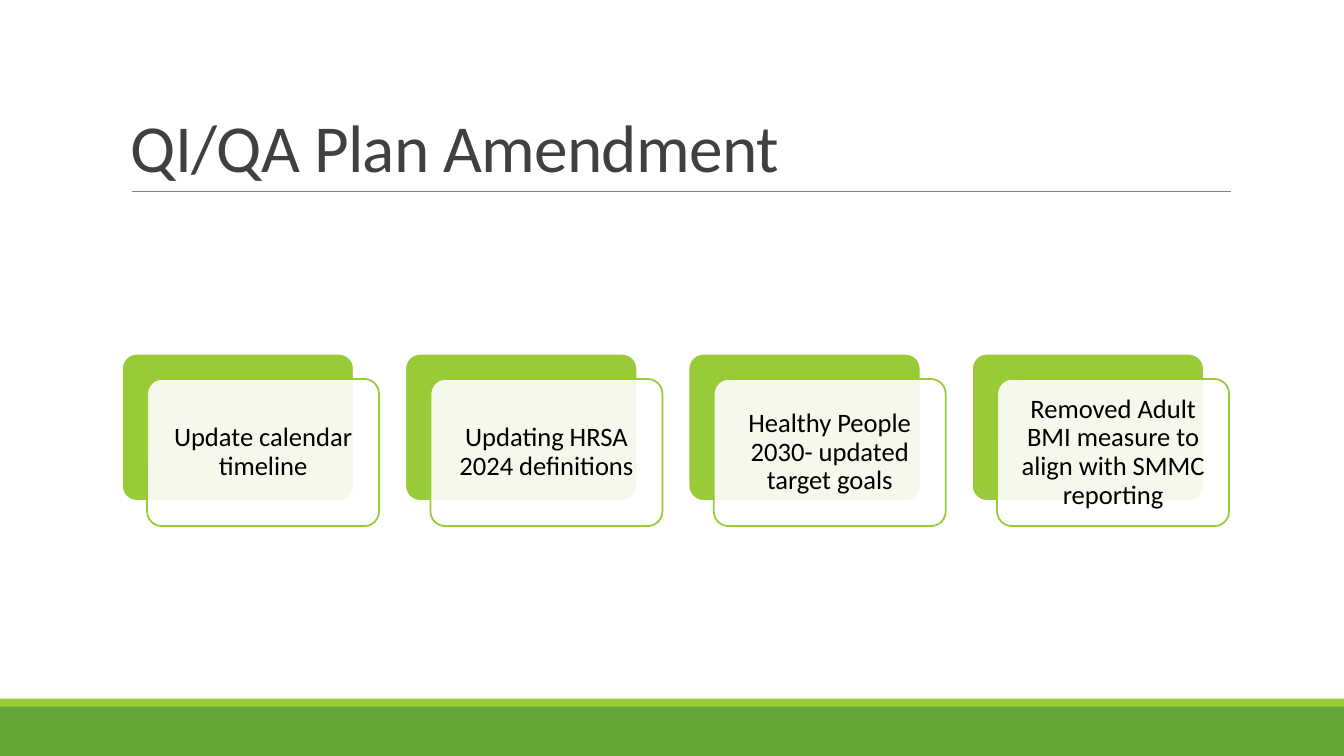
from dataclasses import dataclass

from pptx import Presentation
from pptx.dml.color import RGBColor
from pptx.enum.shapes import MSO_CONNECTOR, MSO_SHAPE
from pptx.enum.text import MSO_ANCHOR as Anchor, PP_ALIGN as Align
from pptx.oxml.ns import qn
from pptx.shapes.autoshape import Shape
from pptx.slide import Slide
from pptx.util import Emu, Pt
from lxml.etree import SubElement

PX = 9144  # EMU per px, 100 px to the inch
WIDTH, HEIGHT = 1333, 750
FONT = "Calibri"
COLORS = {
    "lime": "99CB38",
    "green": "63A537",
    "white": "FFFFFF",
    "rule": "808080",
    "title": "404040",
    "text": "000000",
}


@dataclass(frozen=True)
class Box:
    left: int
    top: int
    width: int
    height: int


@dataclass(frozen=True)
class Band:
    box: Box
    fill: str


BANDS = [
    Band(Box(0, 700, WIDTH, 50), "green"),
    Band(Box(0, 693, WIDTH, 8), "lime"),
]
ITEMS = [
    "Update calendar timeline",
    "Updating HRSA 2024 definitions",
    "Healthy People 2030- updated target goals",
    "Removed Adult BMI measure to align with SMMC reporting",
]
FIRST = Box(121, 351, 230, 146)
STEP = 281
SHIFT = 25


def px(count: int) -> Emu:
    return Emu(count * PX)


def place(box: Box) -> tuple[Emu, Emu, Emu, Emu]:
    return px(box.left), px(box.top), px(box.width), px(box.height)


def color(name: str) -> RGBColor:
    return RGBColor.from_string(COLORS[name])


def add_band(slide: Slide, band: Band) -> None:
    shape = slide.shapes.add_shape(MSO_SHAPE.RECTANGLE, *place(band.box))
    shape.shadow.inherit = False
    shape.fill.solid()
    shape.fill.fore_color.rgb = color(band.fill)
    shape.line.fill.background()


def add_card(slide: Slide, box: Box, fill: str, line: str) -> Shape:
    card = slide.shapes.add_shape(MSO_SHAPE.ROUNDED_RECTANGLE, *place(box))
    card.adjustments[0] = 0.1
    card.shadow.inherit = False
    card.fill.solid()
    card.fill.fore_color.rgb = color(fill)
    card.line.color.rgb = color(line)
    card.line.width = Pt(1.25)
    return card


def add_item(slide: Slide, index: int, text: str) -> None:
    left = FIRST.left + index * STEP
    back = Box(left, FIRST.top, FIRST.width, FIRST.height)
    front = Box(left + SHIFT, FIRST.top + SHIFT, FIRST.width, FIRST.height)
    add_card(slide, back, "lime", "white")
    card = add_card(slide, front, "white", "lime")

    # Let the back card show through
    tint = card.fill._xPr.find(qn("a:solidFill"))[0]
    SubElement(tint, qn("a:alpha")).set("val", "90000")

    frame = card.text_frame
    frame.word_wrap = True
    frame.vertical_anchor = Anchor.MIDDLE
    frame.margin_left = frame.margin_right = px(8)
    frame.margin_top = frame.margin_bottom = px(8)
    para = frame.paragraphs[0]
    para.text = text
    para.alignment = Align.CENTER
    para.line_spacing = 0.9
    para.font.name, para.font.size = FONT, Pt(19)
    para.font.color.rgb = color("text")


def add_title(slide: Slide, text: str) -> None:
    frame = slide.shapes.add_textbox(*place(Box(120, 31, 1100, 159))).text_frame
    frame.word_wrap = True
    frame.vertical_anchor = Anchor.BOTTOM
    para = frame.paragraphs[0]
    para.text = text
    para.line_spacing = 0.85
    para.font.name, para.font.size = FONT, Pt(48)
    para.font.color.rgb = color("title")
    para.runs[0].font._element.set("spc", "-50")


def add_rule(slide: Slide) -> None:
    rule = slide.shapes.add_connector(
        MSO_CONNECTOR.STRAIGHT, px(131), px(190), px(1221), px(190)
    )
    rule.line.color.rgb = color("rule")
    rule.line.width = Pt(0.5)
    SubElement(rule._element.spPr, qn("a:effectLst"))


def main() -> None:
    deck = Presentation()
    deck.slide_width, deck.slide_height = px(WIDTH), px(HEIGHT)
    slide = deck.slides.add_slide(deck.slide_layouts[6])

    # Footer bands
    for band in BANDS:
        add_band(slide, band)

    # Heading
    add_rule(slide)
    add_title(slide, "QI/QA Plan Amendment")

    # Row of amendments
    for index, text in enumerate(ITEMS):
        add_item(slide, index, text)

    deck.save("out.pptx")


if __name__ == "__main__":
    main()
